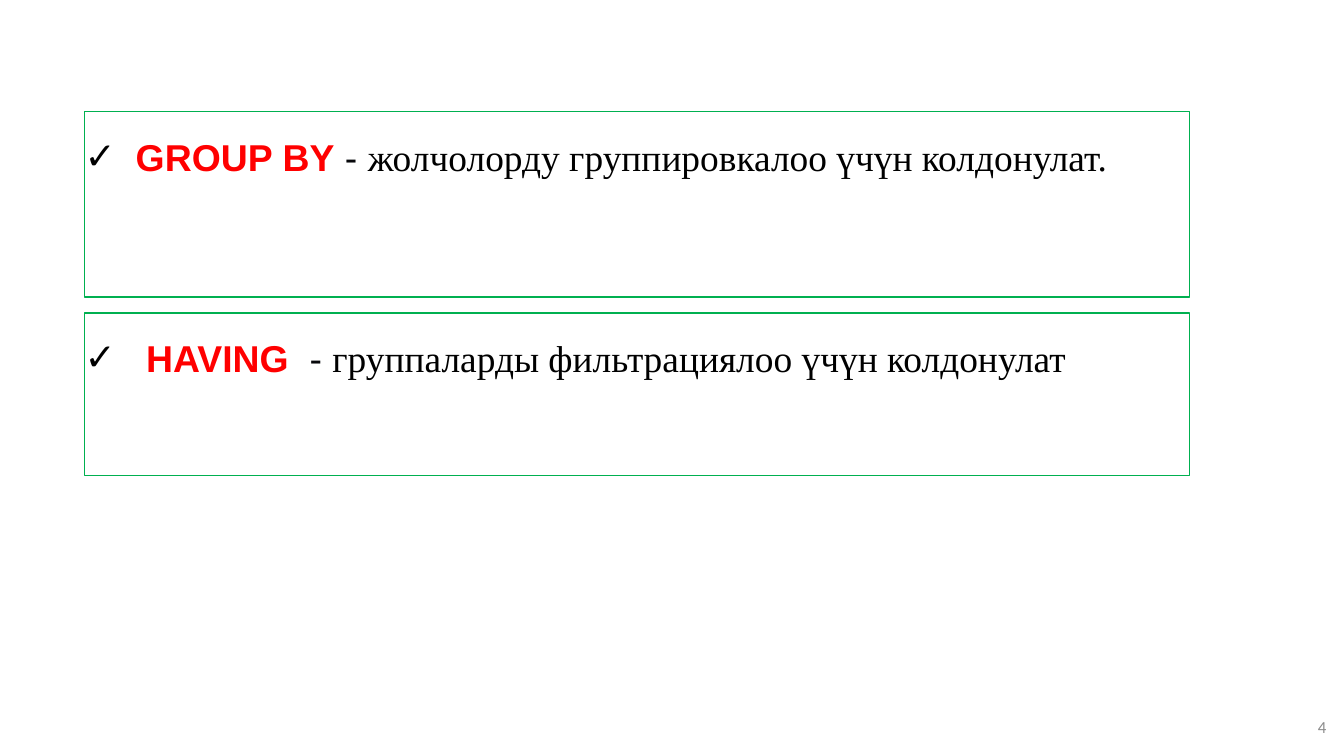
import lxml.etree
import pptx
import pptx.dml.color
import pptx.enum.text
import pptx.oxml.ns
import pptx.util
from pptx.util import Inches

COLORS = {
    "border": "00B050",
    "keyword": "FF0000",
    "dash": "07080B",
    "text": "000000",
    "number": "8C8C8C",
}
ALIGN = pptx.enum.text.PP_ALIGN
ANCHOR = pptx.enum.text.MSO_ANCHOR


def rgb(name):
    return pptx.dml.color.RGBColor.from_string(COLORS[name])


def prepare_frame(shape, anchor):
    """Clear the margins, wrap the text and return the first paragraph."""
    frame = shape.text_frame
    frame.margin_left = frame.margin_right = 0
    frame.margin_top = frame.margin_bottom = 0
    frame.word_wrap = True
    frame.auto_size = pptx.enum.text.MSO_AUTO_SIZE.NONE
    frame.vertical_anchor = anchor
    return frame.paragraphs[0]


presentation = pptx.Presentation()
presentation.slide_width = Inches(10)
presentation.slide_height = Inches(10) * 9 // 16
slide = presentation.slides.add_slide(presentation.slide_layouts[3])
title = slide.shapes.title
title.element.getparent().remove(title.element)

# Placeholder index, top, height, alignment, runs of (text, font, color, bold)
definitions = [
    (1, 0.83, 1.38, ALIGN.JUSTIFY, [
        ("GROUP BY", "Arial", "keyword", True),
        (" - ", "Arial", "dash", False),
        ("жолчолорду группировкалоо үчүн колдонулат.", "Times New Roman", "text", False),
    ]),
    (2, 2.33, 1.21, ALIGN.LEFT, [
        (" ", "Arial", "dash", False),
        ("HAVING ", "Arial", "keyword", True),
        (" - ", "Arial", "dash", False),
        ("группаларды фильтрациялоо үчүн колдонулат", "Times New Roman", "text", False),
    ]),
]

for index, top, height, alignment, runs in definitions:
    body = slide.placeholders[index]
    body.left, body.top = Inches(0.63), Inches(top)
    body.width, body.height = Inches(8.22), Inches(height)
    body.line.color.rgb = rgb("border")
    body.line.width = pptx.util.Pt(0.75)

    paragraph = prepare_frame(body, ANCHOR.TOP)
    paragraph.alignment = alignment
    paragraph.line_spacing = 1.5
    paragraph.space_before = pptx.util.Pt(0)
    for text, font_name, color, bold in runs:
        run = paragraph.add_run()
        run.text = text
        run.font.name = font_name
        run.font.size = pptx.util.Pt(20)
        run.font.bold = bold
        run.font.color.rgb = rgb(color)

    properties = paragraph._p.get_or_add_pPr()
    properties.set("marL", str(Inches(0.38)))
    properties.set("indent", str(-Inches(0.38)))
    qn = pptx.oxml.ns.qn
    bullet_color = lxml.etree.SubElement(properties, qn("a:buClr"))
    lxml.etree.SubElement(bullet_color, qn("a:srgbClr"), val=COLORS["text"])
    lxml.etree.SubElement(properties, qn("a:buFont"), typeface="Arial")
    lxml.etree.SubElement(properties, qn("a:buChar"), char="✓")

number_box = slide.shapes.add_textbox(Inches(9.27), Inches(5.19), Inches(0.6), Inches(0.43))
paragraph = prepare_frame(number_box, ANCHOR.MIDDLE)
paragraph.text = "4"
paragraph.alignment = ALIGN.RIGHT
paragraph.font.name = "Calibri"
paragraph.font.size = pptx.util.Pt(9)
paragraph.font.color.rgb = rgb("number")

presentation.save("out.pptx")
